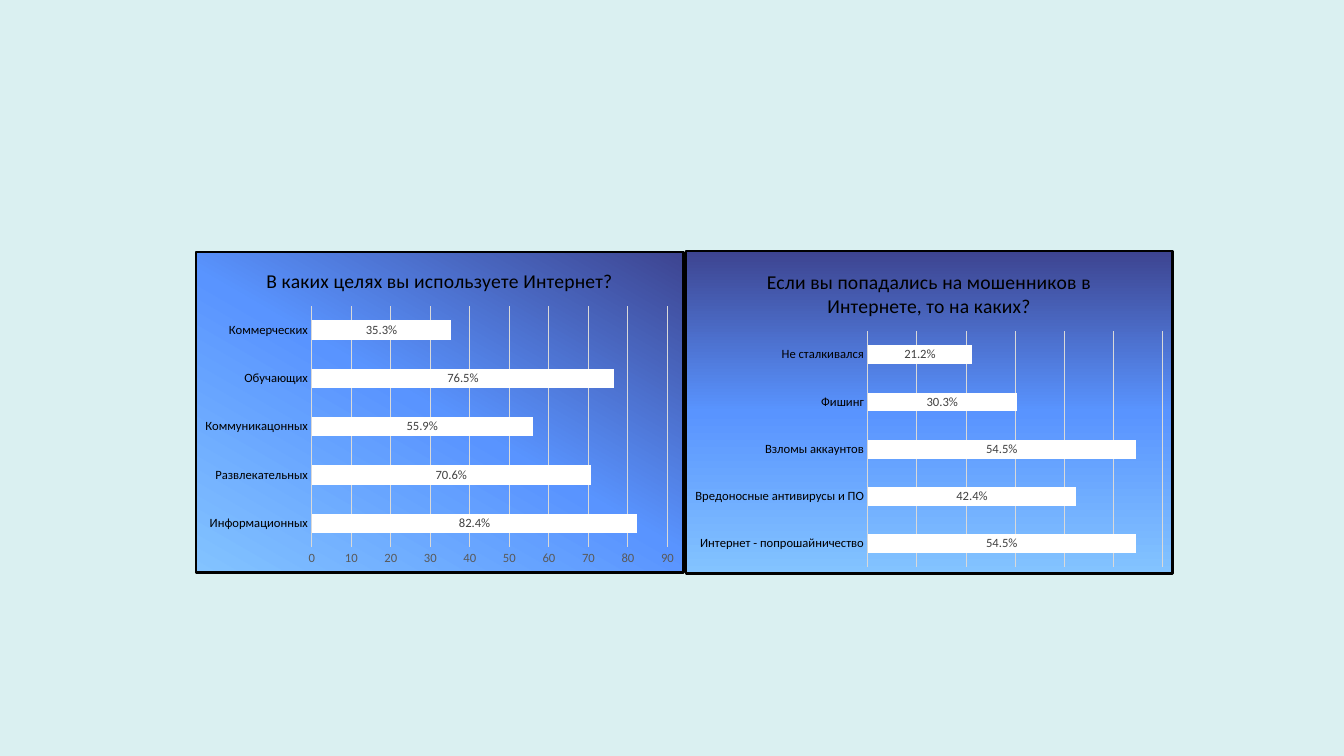
from copy import deepcopy
from dataclasses import dataclass

from lxml.etree import SubElement
from pptx import Presentation
from pptx.chart.data import CategoryChartData
from pptx.dml.color import RGBColor
from pptx.enum.chart import XL_CHART_TYPE, XL_LABEL_POSITION, XL_TICK_MARK
from pptx.enum.shapes import MSO_SHAPE
from pptx.oxml.ns import qn
from pptx.util import Inches, Pt

LIGHT, MIDDLE, DARK = "83C3FF", "5994FF", "3D4490"


@dataclass
class Panel:
    """A survey question with its answers and its backdrop."""
    title: str
    answers: dict[str, float]
    box: tuple[float, float, float, float]
    top: float
    colors: tuple[str, str, str]
    angle: int
    peak: float
    step: float
    format: str
    scale: bool


PANELS = [
    Panel("В каких целях вы используете Интернет?",
          {"Информационных": 82.4, "Развлекательных": 70.6, "Коммуникацонных": 55.9,
           "Обучающих": 76.5, "Коммерческих": 35.3},
          (1.94, 2.5, 4.84, 3.18), 2.5, (LIGHT, MIDDLE, DARK), 60, 90, 10, '0.0"%"', True),
    Panel("Если вы попадались на мошенников в Интернете, то на каких?",
          {"Интернет - попрошайничество": 0.545, "Вредоносные антивирусы и ПО": 0.424,
           "Взломы аккаунтов": 0.545, "Фишинг": 0.303, "Не сталкивался": 0.212},
          (6.8, 2.49, 4.83, 3.2), 2.51, (DARK, MIDDLE, LIGHT), 270, 0.6, 0.1, "0.0%", False),
]


def rgb(code: str) -> RGBColor:
    """Turn a hex string into a colour."""
    return RGBColor.from_string(code)


def style(font, size: float, color: str) -> None:
    """Set the face, size and colour of a font."""
    font.name, font.size, font.bold = "Calibri", Pt(size), False
    font.color.rgb = rgb(color)


def rule(line) -> None:
    """Make a thin grey line."""
    line.color.rgb = rgb("D9D9D9")
    line.width = Pt(0.75)


def add_back(slide, panel: Panel) -> None:
    """Draw the gradient box behind a chart."""
    shape = slide.shapes.add_shape(MSO_SHAPE.RECTANGLE, *map(Inches, panel.box))
    shape.shadow.inherit = False
    shape.line.color.rgb = rgb("000000")
    shape.line.width = Pt(1.5)
    shape.fill.gradient()
    shape.fill.gradient_angle = panel.angle
    first = shape._element.spPr.find(".//" + qn("a:gs"))
    first.addnext(deepcopy(first))
    for stop, color, place in zip(shape.fill.gradient_stops, panel.colors, (0, 0.5, 1)):
        stop.color.rgb = rgb(color)
        stop.position = place


def clear(chart) -> None:
    """Leave the chart and its plot area unfilled."""
    space = chart._chartSpace
    back = SubElement(space, qn("c:spPr"))
    space.find(qn("c:txPr")).addprevious(back)
    plot = SubElement(space.find(".//" + qn("c:plotArea")), qn("c:spPr"))
    for part in (back, plot):
        SubElement(part, qn("a:noFill"))
        SubElement(SubElement(part, qn("a:ln")), qn("a:noFill"))


def add_bars(slide, panel: Panel) -> None:
    """Draw the bar chart of a panel."""
    data = CategoryChartData()
    data.categories = list(panel.answers)
    data.add_series(panel.title, list(panel.answers.values()))
    left, _, width, _ = panel.box
    place = map(Inches, (left, panel.top, width, 3.18))
    chart = slide.shapes.add_chart(XL_CHART_TYPE.BAR_STACKED, *place, data).chart
    style(chart.font, 10, "000000")
    clear(chart)
    chart.has_legend = False
    chart.has_title = True
    frame = chart.chart_title.text_frame
    frame.text = panel.title
    style(frame.paragraphs[0].font, 14, "000000")

    names, values = chart.category_axis, chart.value_axis
    for axis, color in ((names, "000000"), (values, "595959")):
        axis.major_tick_mark = axis.minor_tick_mark = XL_TICK_MARK.NONE
        style(axis.tick_labels.font, 9, color)
    rule(names.format.line)
    names.has_major_gridlines = False
    values.has_major_gridlines = True
    rule(values.major_gridlines.format.line)
    values.format.line.fill.background()
    values.minimum_scale, values.maximum_scale = 0, panel.peak
    values.major_unit = panel.step
    values.visible = panel.scale

    plot = chart.plots[0]
    plot.gap_width, plot.overlap = 150, 100
    plot.vary_by_categories = False
    bars = plot.series[0]
    bars.format.fill.solid()
    bars.format.fill.fore_color.rgb = rgb("FFFFFF")
    labels = bars.data_labels
    labels.show_value = True
    labels.position = XL_LABEL_POSITION.CENTER
    labels.number_format = panel.format
    labels.number_format_is_linked = False
    style(labels.font, 9, "404040")


def main() -> None:
    """Build the slide and save it."""
    deck = Presentation()
    deck.slide_width, deck.slide_height = Inches(13.33), Inches(7.5)
    slide = deck.slides.add_slide(deck.slide_layouts[6])
    slide.background.fill.solid()
    slide.background.fill.fore_color.rgb = rgb("DAF0F1")
    for draw in (add_back, add_bars):
        for panel in PANELS:
            draw(slide, panel)
    deck.save("out.pptx")


if __name__ == "__main__":
    main()
